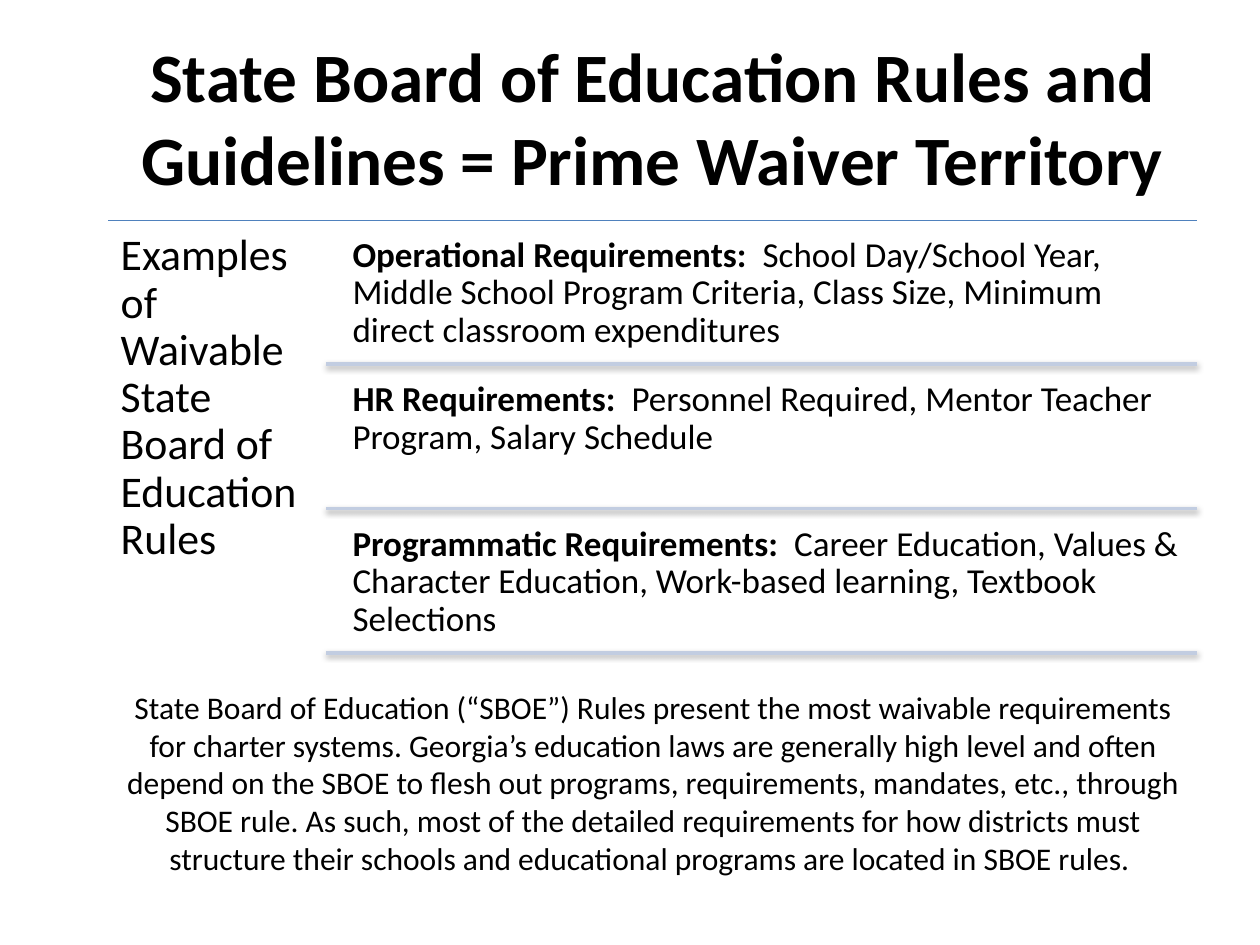
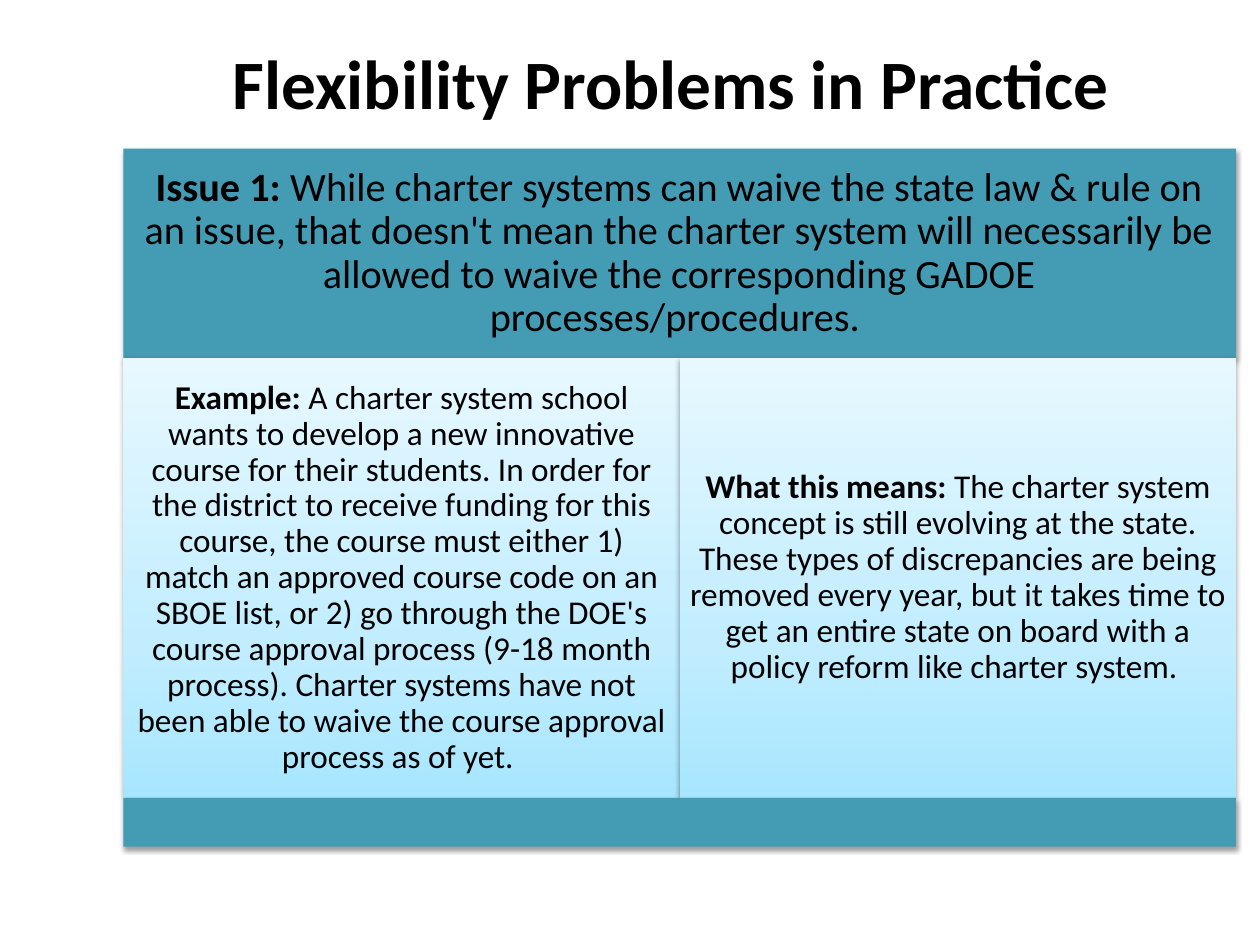
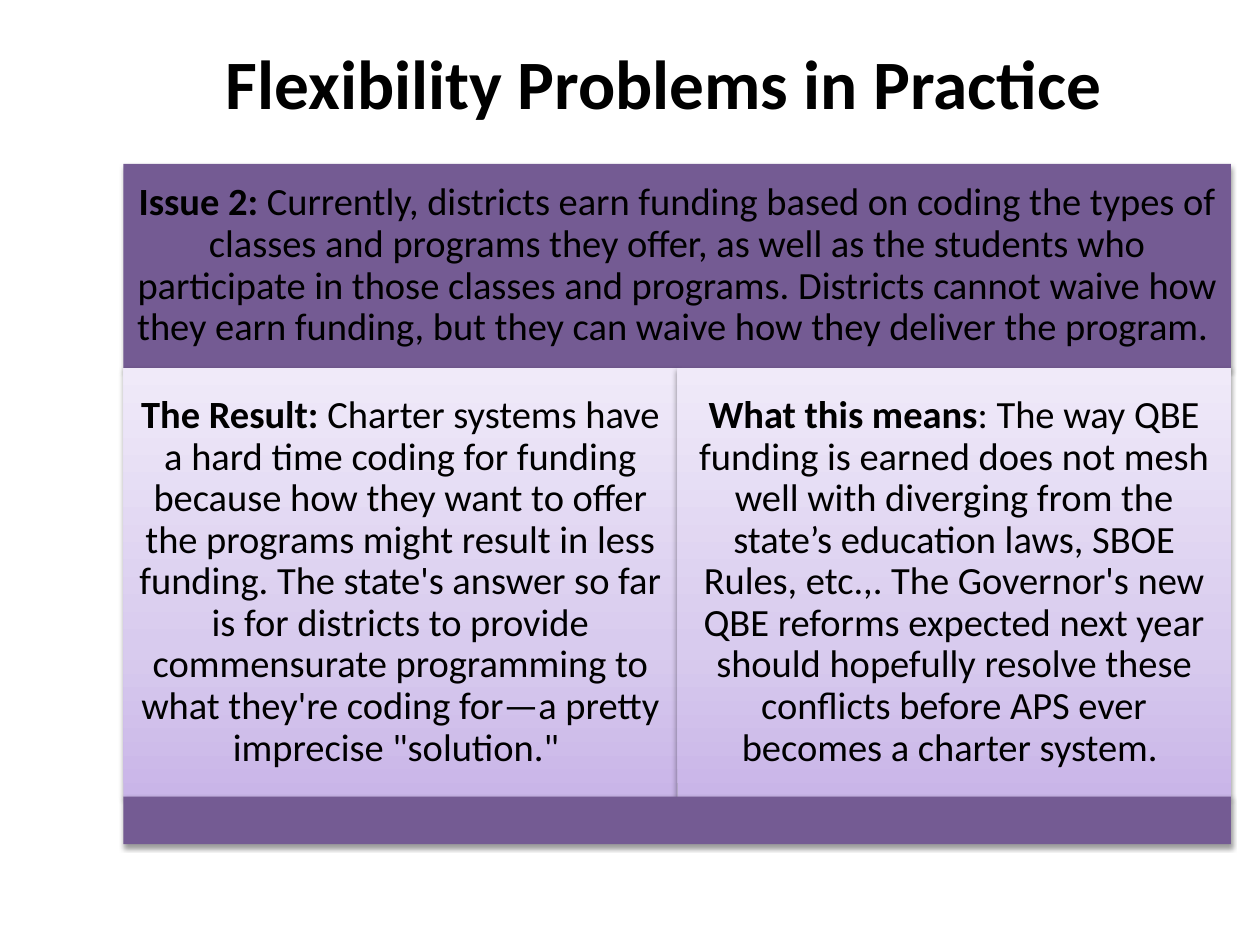
from copy import deepcopy

from lxml.etree import SubElement
from pptx import Presentation
from pptx.dml.color import RGBColor
from pptx.enum.shapes import MSO_CONNECTOR, MSO_SHAPE
from pptx.enum.text import MSO_ANCHOR, PP_ALIGN
from pptx.oxml.ns import qn
from pptx.util import Inches, Pt

FONT = "Calibri"
BLACK = RGBColor(0x00, 0x00, 0x00)
RULE_BLUE = RGBColor(0x4F, 0x81, 0xBD)
ROW_RULE = RGBColor(0xC2, 0xCD, 0xE1)
TEAL = RGBColor(0x44, 0x9C, 0xB4)
PURPLE = RGBColor(0x74, 0x5B, 0x93)
TEAL_TINTS = (RGBColor(0xA7, 0xE6, 0xFF), RGBColor(0xC1, 0xED, 0xFF), RGBColor(0xE7, 0xF8, 0xFF))
PURPLE_TINTS = (RGBColor(0xC9, 0xB5, 0xE8), RGBColor(0xD8, 0xCB, 0xEE), RGBColor(0xF0, 0xEA, 0xF9))
TINT_POSITIONS = (0, 0.35, 1)
TITLE_SIZE = 39.6
TIGHT = 0.9


def write_text(shape, runs, size, align=PP_ALIGN.CENTER, anchor=MSO_ANCHOR.TOP,
               inset=None, spacing=None):
    """Fill a shape with one paragraph of (text, bold) runs."""
    frame = shape.text_frame
    frame.word_wrap = True
    frame.vertical_anchor = anchor
    if inset is not None:
        frame.margin_left = frame.margin_right = Inches(inset)
        frame.margin_top = frame.margin_bottom = Inches(inset)
    para = frame.paragraphs[0]
    para.alignment = align
    para.line_spacing = spacing
    for text, bold in runs:
        span = para.add_run()
        span.text = text
        span.font.name = FONT
        span.font.size = Pt(size)
        span.font.bold = bold
        span.font.color.rgb = BLACK


def add_soft_shadow(shape, distance=1.6, opacity=38):
    """Cast a downward shadow; the line must be set before."""
    effects = SubElement(shape._element.spPr, qn("a:effectLst"))
    shadow = SubElement(effects, qn("a:outerShdw"), blurRad=str(Pt(3.1)),
                        dist=str(Pt(distance)), dir="5400000", rotWithShape="0")
    color = SubElement(shadow, qn("a:srgbClr"), val="000000")
    SubElement(color, qn("a:alpha"), val=str(opacity * 1000))


deck = Presentation()
deck.slide_width, deck.slide_height = Inches(10), Inches(7.5)
blank = deck.slide_layouts[6]

titles = [
    ("State Board of Education Rules and Guidelines = Prime Waiver Territory", (0.86, 0.3, 8.64, 1.25)),
    ("Flexibility Problems in Practice", (0.98, 0.3, 8.69, 0.69)),
    ("Flexibility Problems in Practice", (0.77, 0.27, 9, 0.76)),
]
for title, place in titles:
    page = deck.slides.add_slide(blank)
    box = page.shapes.add_textbox(*map(Inches, place))
    write_text(box, [(title, True)], TITLE_SIZE, anchor=MSO_ANCHOR.MIDDLE)
rules_page, *issue_pages = deck.slides

# Waivable rules: a label column beside three ruled rows
LEFT, RIGHT, TOP = 0.86, 9.5, 1.75
LABEL_WIDTH = (RIGHT - LEFT) / 5
ROWS_LEFT = LEFT + LABEL_WIDTH
TEXT_LEFT = ROWS_LEFT + 0.13
ROW_TOP, ROW_HEIGHT, ROW_STEP = 1.8, 1.09, 3.44 / 3

top_rule = rules_page.shapes.add_connector(
    MSO_CONNECTOR.STRAIGHT, Inches(LEFT), Inches(TOP), Inches(RIGHT), Inches(TOP))
top_rule.line.color.rgb = RULE_BLUE
top_rule.line.width = Pt(0.75)
add_soft_shadow(top_rule, distance=1.8, opacity=35)

label = rules_page.shapes.add_textbox(Inches(LEFT), Inches(TOP), Inches(LABEL_WIDTH), Inches(3.49))
write_text(label, [("Examples of Waivable State Board of Education Rules", False)], 25,
           PP_ALIGN.LEFT, inset=0.1, spacing=TIGHT)

requirements = [
    ("Operational Requirements:  ",
     "School Day/School Year, Middle School Program Criteria, Class Size, "
     "Minimum direct classroom expenditures"),
    ("HR Requirements:  ", "Personnel Required, Mentor Teacher Program, Salary Schedule"),
    ("Programmatic Requirements:  ",
     "Career Education, Values & Character Education, Work-based learning, Textbook Selections"),
]
for row, (heading, examples) in enumerate(requirements):
    top = ROW_TOP + row * ROW_STEP
    bottom = Inches(top + ROW_HEIGHT)
    box = rules_page.shapes.add_textbox(
        Inches(TEXT_LEFT), Inches(top), Inches(RIGHT - TEXT_LEFT), Inches(ROW_HEIGHT))
    write_text(box, [(heading, True), (examples, False)], 20,
               PP_ALIGN.LEFT, inset=0.08, spacing=TIGHT)
    row_rule = rules_page.shapes.add_connector(
        MSO_CONNECTOR.STRAIGHT, Inches(ROWS_LEFT), bottom, Inches(RIGHT), bottom)
    row_rule.line.color.rgb = ROW_RULE
    row_rule.line.width = Pt(2)
    add_soft_shadow(row_rule)

summary = rules_page.shapes.add_textbox(Inches(LEFT), Inches(5.41), Inches(8.65), Inches(1.62))
write_text(summary, [(
    "State Board of Education (“SBOE”) Rules present the most waivable requirements for charter "
    "systems. Georgia’s education laws are generally high level and often depend on the SBOE to "
    "flesh out programs, requirements, mandates, etc., through SBOE rule. As such, most of the "
    "detailed requirements for how districts must structure their schools and educational programs "
    "are located in SBOE rules. ", False)], 18)

# Issue boards: a header, two half-width panels and a base band
BOARD_LEFT = 0.98
HEADER_SHARE, PANEL_SHARE, BASE_SHARE = 0.3, 0.63, 0.07
boards = [
    dict(top=1.18, width=8.83, height=5.54, color=TEAL, tints=TEAL_TINTS,
         header_size=23, panel_size=19, header_inset=0.1, panel_inset=0.08, texts=[
             ("Issue 1: ",
              "While charter systems can waive the state law & rule on an issue, that doesn't mean "
              "the charter system will necessarily be allowed to waive the corresponding GADOE "
              "processes/procedures. "),
             ("Example:",
              " A charter system school wants to develop a new innovative course for their students. "
              "In order for the district to receive funding for this course, the course must either "
              "1) match an approved course code on an SBOE list, or 2) go through the DOE's course "
              "approval process (9-18 month process). Charter systems have not been able to waive "
              "the course approval process as of yet. "),
             ("What this means: ",
              "The charter system concept is still evolving at the state. These types of "
              "discrepancies are being removed every year, but it takes time to get an entire state "
              "on board with a policy reform like charter system. ")]),
    dict(top=1.3, width=8.79, height=5.4, color=PURPLE, tints=PURPLE_TINTS,
         header_size=22, panel_size=22, header_inset=0.09, panel_inset=0.09, texts=[
             ("Issue 2: ",
              "Currently, districts earn funding based on coding the types of classes and programs "
              "they offer, as well as the students who participate in those classes and programs. "
              "Districts cannot waive how they earn funding, but they can waive how they deliver "
              "the program. "),
             ("The Result: ",
              "Charter systems have a hard time coding for funding because how they want to offer "
              "the programs might result in less funding. The state's answer so far is for districts "
              "to provide commensurate programming to what they're coding for—a pretty imprecise "
              "\"solution.\" "),
             ("What this means",
              ": The way QBE funding is earned does not mesh well with diverging from the state’s "
              "education laws, SBOE Rules, etc.,. The Governor's new QBE reforms expected next year "
              "should hopefully resolve these conflicts before APS ever becomes a charter system. ")]),
]
for page, board in zip(issue_pages, boards):
    width, height = board["width"], board["height"]
    header, *panels = board["texts"]
    panel_top = board["top"] + HEADER_SHARE * height
    base_top = panel_top + PANEL_SHARE * height
    half = width / 2
    blocks = [(BOARD_LEFT, board["top"], width, HEADER_SHARE, header, "header")]
    for column, panel in enumerate(panels):
        blocks.append((BOARD_LEFT + column * half, panel_top, half, PANEL_SHARE, panel, "panel"))
    blocks.append((BOARD_LEFT, base_top, width, BASE_SHARE, None, "base"))

    for left, top, block_width, share, text, role in blocks:
        block = page.shapes.add_shape(
            MSO_SHAPE.RECTANGLE, Inches(left), Inches(top), Inches(block_width), Inches(share * height))
        if role == "panel":
            block.fill.gradient()
            block.fill.gradient_angle = 90
            stop_list = block._element.spPr.find(".//" + qn("a:gsLst"))
            stop_list.append(deepcopy(stop_list[-1]))
            for stop, tint, position in zip(block.fill.gradient_stops, board["tints"], TINT_POSITIONS):
                stop.color.rgb = tint
                stop.position = position
        else:
            block.fill.solid()
            block.fill.fore_color.rgb = board["color"]
        block.line.fill.background()
        add_soft_shadow(block)
        if text:
            heading, body = text
            write_text(block, [(heading, True), (body, False)], board[role + "_size"],
                       anchor=MSO_ANCHOR.MIDDLE, inset=board[role + "_inset"], spacing=TIGHT)

deck.save("out.pptx")
